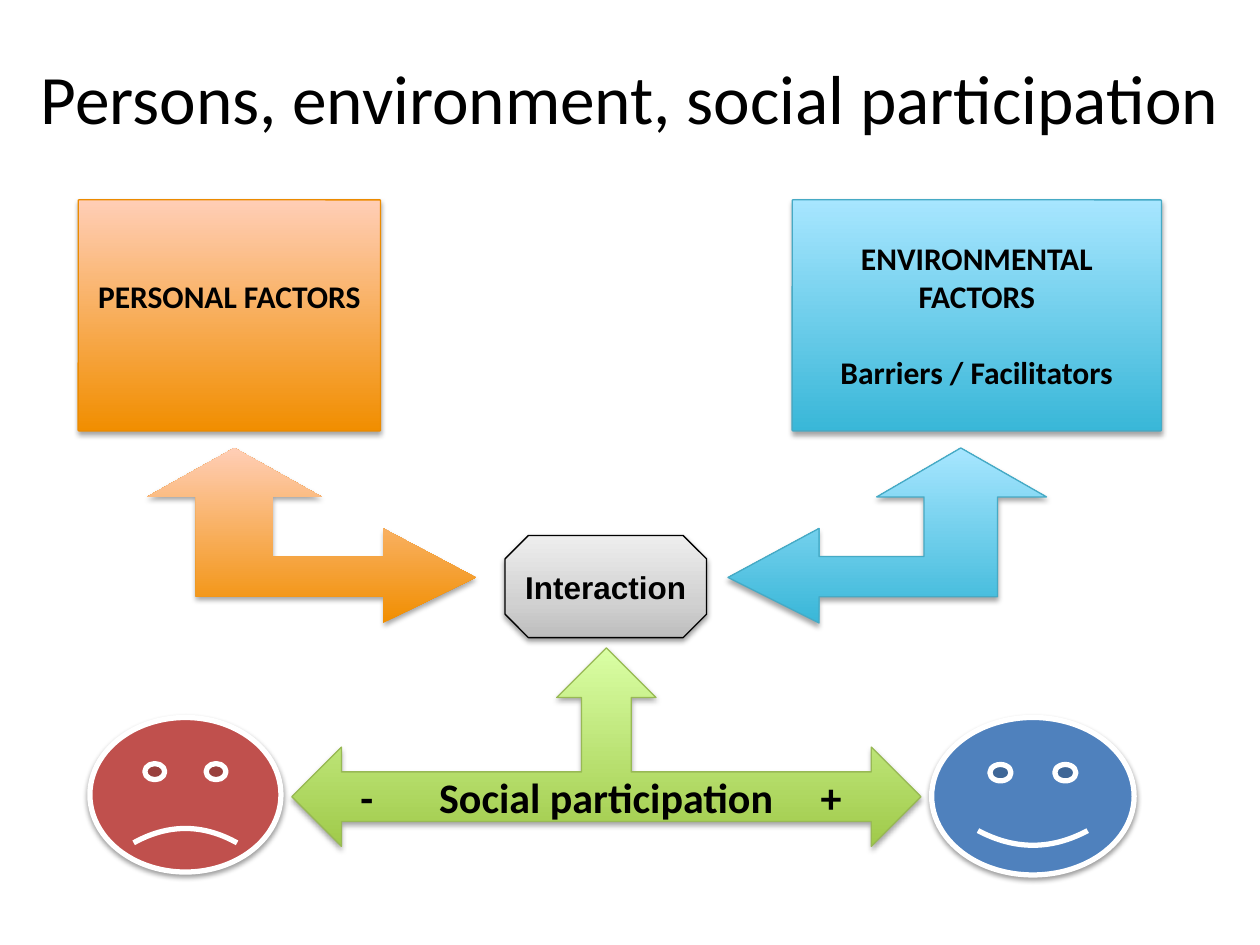
"""Build the slide on persons, environment and social participation."""
from copy import deepcopy

from lxml import etree
from pptx import Presentation
from pptx import util as u
from pptx.dml.color import RGBColor
from pptx.enum import shapes, text
from pptx.oxml.ns import qn

Pt = u.Pt
S = shapes.MSO_SHAPE
ORANGE = [(0, "F18E00"), (1, "FFCEB6")]
BLUE = [(0, "39B7D8"), (1, "A7E6FF")]
GREEN = [(0, "A0CA4A"), (1, "DAFFA5")]
GREY = [(0, "BDBDBD"), (0.35, "D1D1D1"), (1, "EEEEEE")]


def style(sp, fill, line, width=0.75, alpha=35, dist=1.8):
    rgb = RGBColor.from_string
    if isinstance(fill, str):
        sp.fill.solid()
        sp.fill.fore_color.rgb = rgb(fill)
    else:
        sp.fill.gradient()
        sp.fill.gradient_angle = 90
        stops = sp._element.spPr.find(".//" + qn("a:gsLst"))
        for _ in fill[2:]:
            stops.append(deepcopy(stops[0]))
        for stop, (pos, color) in zip(sp.fill.gradient_stops, fill):
            stop.position = pos
            stop.color.rgb = rgb(color)
    if line:
        sp.line.color.rgb = rgb(line)
        sp.line.width = Pt(width)
    else:
        sp.line.fill.background()
    sp.shadow.inherit = False
    effects = sp._element.spPr.find(qn("a:effectLst"))
    shadow = etree.SubElement(effects, qn("a:outerShdw"), blurRad=str(Pt(3.1)),
                              dist=str(Pt(dist)), dir="5400000", rotWithShape="0")
    color = etree.SubElement(shadow, qn("a:srgbClr"), val="000000")
    etree.SubElement(color, qn("a:alpha"), val=str(alpha * 1000))


def write(sp, lines, size, font="Calibri", bold=True, gap=0, wrap=True):
    tf = sp.text_frame
    tf.word_wrap = wrap
    tf.vertical_anchor = text.MSO_ANCHOR.MIDDLE
    for i, line in enumerate(lines):
        p = tf.paragraphs[0] if i == 0 else tf.add_paragraph()
        p.alignment = text.PP_ALIGN.CENTER
        p.space_before = Pt(gap if i else 0)
        r = p.add_run()
        r.text = line
        for key, value in {"name": font, "size": Pt(size), "bold": bold}.items():
            setattr(r.font, key, value)
        r.font.color.rgb = RGBColor.from_string("000000")
    return tf


prs = Presentation()
prs.slide_width, prs.slide_height = Pt(720), Pt(540)
slide = prs.slides.add_slide(prs.slide_layouts[6])

title = slide.shapes.add_textbox(Pt(0), Pt(21.6), Pt(720), Pt(67))
write(title, ["Persons, environment, social participation"], 39.6, bold=False)

factors = [
    (44.7, 172.8, ORANGE, "EC8B00", ["PERSONAL FACTORS"], 25.6),
    (452.7, 211, BLUE, "46AAC5", ["ENVIRONMENTAL FACTORS", "Barriers / Facilitators"], 3.6),
]
for left, width, fill, line, lines, bottom in factors:
    sp = slide.shapes.add_shape(S.ROUNDED_RECTANGLE, Pt(left), Pt(114.2), Pt(width), Pt(132))
    sp.adjustments[0] = 0.004
    style(sp, fill, line)
    write(sp, lines, 18, gap=22).margin_bottom = Pt(bottom)

sp = slide.shapes.add_shape(S.OCTAGON, Pt(288.6), Pt(306), Pt(115.2), Pt(58.4))
sp.adjustments[0] = 0.23
style(sp, GREY, "000000", alpha=38, dist=1.6)
write(sp, ["Interaction"], 18, font="Arial", wrap=False)

elbow_ys = [255.6, 284.4, 284.4, 317.5, 317.5, 302.4, 329.5, 356.4, 341.3, 341.3, 284.4, 284.4]
elbows = [
    ([134.4, 184.5, 156.3, 156.3, 218.9, 218.9, 272, 218.9, 218.9, 112.3, 112.3, 84.2],
     ORANGE, None),
    ([549.2, 501, 527.8, 527.8, 467.5, 467.5, 416.3, 467.5, 467.5, 570.4, 570.4, 597.6],
     BLUE, "46AAC5"),
]
for xs, fill, line in elbows:
    points = list(zip(xs, elbow_ys))
    builder = slide.shapes.build_freeform(*points[0], scale=Pt(1))
    builder.add_line_segments(points[1:], close=True)
    style(builder.convert_to_shape(), fill, line)

faces = [(51.4, 109.2, 88.3, "C0504D", -0.047), (532.4, 115.7, 90, "4F81BD", 0.047)]
for left, width, height, fill, smile in faces:
    sp = slide.shapes.add_shape(S.SMILEY_FACE, Pt(left), Pt(410), Pt(width), Pt(height))
    sp.adjustments[0] = smile
    style(sp, fill, "FFFFFF", width=3, alpha=38, dist=1.6)

sp = slide.shapes.add_shape(S.LEFT_RIGHT_UP_ARROW, Pt(166.8), Pt(370.2), Pt(359.5), Pt(113.4))
style(sp, GREEN, "98B955")
tf = write(sp, ["-\tSocial participation\t+"], 24)
tf.margin_left = Pt(25)
p = tf.paragraphs[0]
p.alignment = text.PP_ALIGN.LEFT
tabs = etree.SubElement(p._p.get_or_add_pPr(), qn("a:tabLst"))
for pos in (45, 263):
    etree.SubElement(tabs, qn("a:tab"), pos=str(Pt(pos)), algn="l")

prs.save("out.pptx")
